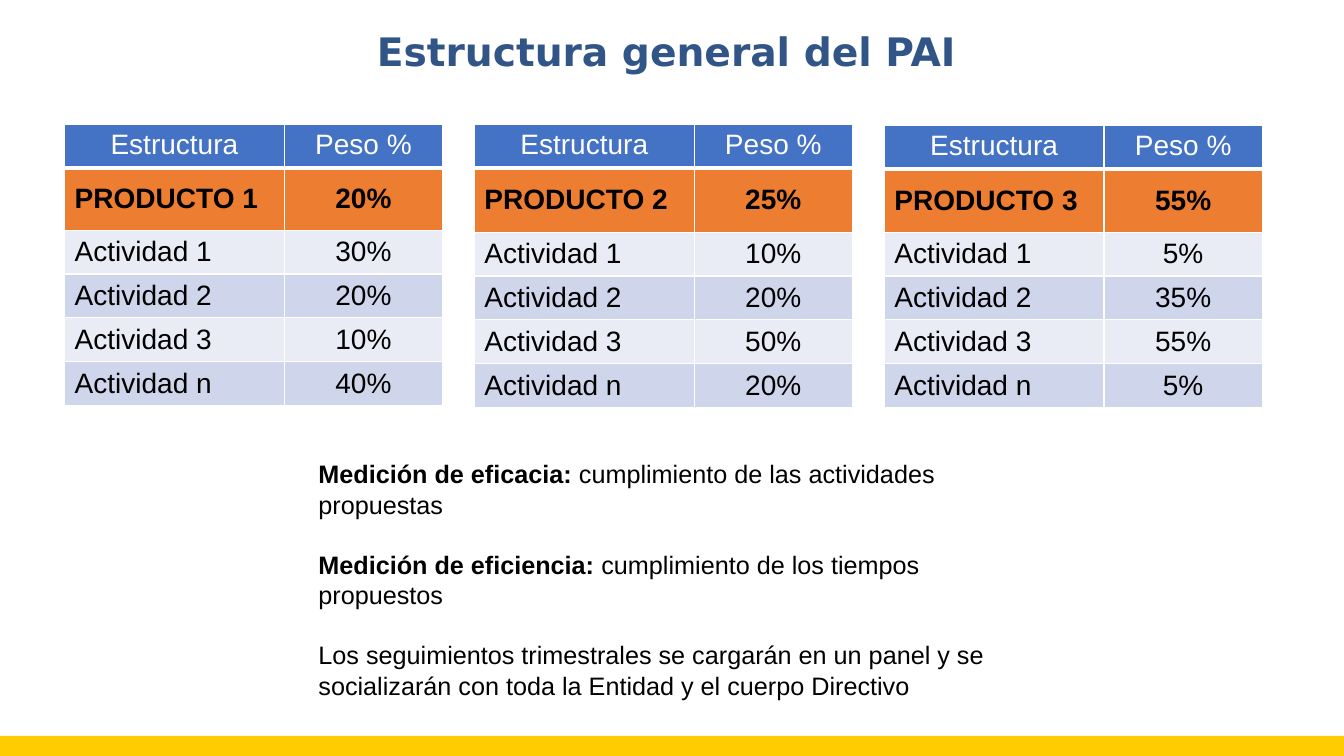
from lxml.etree import SubElement
from pptx import Presentation
from pptx.dml.color import RGBColor as RGB
from pptx.enum.shapes import MSO_SHAPE as SHAPE
from pptx.enum.text import MSO_ANCHOR as ANCHOR, MSO_AUTO_SIZE as AUTO, PP_ALIGN as ALIGN
from pptx.oxml.ns import qn
from pptx.util import Inches, Pt

COLORS = {
    "title": "315587", "bar": "FFCC01", "header": "4472C4", "product": "ED7D31",
    "light": "E9EBF5", "dark": "CFD5EA", "white": "FFFFFF", "text": "000000",
}
ACTIVITIES = ["Actividad 1", "Actividad 2", "Actividad 3", "Actividad n"]
# Per product: weight, activity weights, table top, product row height
PRODUCTS = [
    ("20%", ["30%", "20%", "10%", "40%"], 1.23, 0.62),
    ("25%", ["10%", "20%", "50%", "20%"], 1.23, 0.64),
    ("55%", ["5%", "35%", "55%", "5%"], 1.24, 0.63),
]
NOTES = [
    ("Medición de eficacia:", " cumplimiento de las actividades propuestas"),
    ("Medición de eficiencia:", " cumplimiento de los tiempos propuestos"),
    ("", "Los seguimientos trimestrales se cargarán en un panel y se "
         "socializarán con toda la Entidad y el cuerpo Directivo"),
]


def color(name):
    return RGB.from_string(COLORS[name])


def add_run(p, text, size=18, font="Arial", fill="text", bold=False):
    r = p.add_run()
    r.text = text
    r.font.size, r.font.name, r.font.bold = Pt(size), font, bold
    r.font.color.rgb = color(fill)


def add_text_box(s, x, y, w, h, wrap=True):
    tf = s.shapes.add_textbox(Inches(x), Inches(y), Inches(w), Inches(h)).text_frame
    tf.word_wrap = wrap
    tf.auto_size = AUTO.SHAPE_TO_FIT_TEXT
    return tf


def set_borders(cell, bottom=1):
    tc_pr = cell._tc.get_or_add_tcPr()
    for i, (side, width) in enumerate(
            [("lnL", 1), ("lnR", 1), ("lnT", 1), ("lnB", bottom)]):
        ln = SubElement(tc_pr, qn("a:" + side), w=str(Pt(width)))
        fill = SubElement(ln, qn("a:solidFill"))
        SubElement(fill, qn("a:srgbClr"), val=COLORS["white"])
        tc_pr.insert(i, ln)  # borders come before the cell fill


def add_bar(s, x, y, w, h):
    sp = s.shapes.add_shape(SHAPE.RECTANGLE, Inches(x), Inches(y), Inches(w), Inches(h))
    sp.shadow.inherit = False
    sp.fill.solid()
    sp.fill.fore_color.rgb = color("bar")
    sp.line.fill.background()


def add_title(s, x, y, w, h):
    p = add_text_box(s, x, y, w, h, wrap=False).paragraphs[0]
    add_run(p, "Estructura general del PAI", size=28, font="DejaVu Sans",
            fill="title", bold=True)


def add_product_table(s, x, y, rows, product_height, row_height=0.43):
    heights = [row_height, product_height] + [row_height] * (len(rows) - 2)
    widths = [2.18, 1.57]
    table = s.shapes.add_table(len(rows), len(widths), Inches(x), Inches(y),
                               Inches(sum(widths)), Inches(sum(heights))).table
    table.horz_banding = False
    for col, width in zip(table.columns, widths):
        col.width = Inches(width)
    fills = ["header", "product", "light", "dark", "light", "dark"]
    for i, (values, height, fill) in enumerate(zip(rows, heights, fills)):
        table.rows[i].height = Inches(height)
        for j, value in enumerate(values):
            cell = table.cell(i, j)
            cell.fill.solid()
            cell.fill.fore_color.rgb = color(fill)
            cell.vertical_anchor = ANCHOR.MIDDLE if i else ANCHOR.TOP
            set_borders(cell, bottom=1 if i else 3)
            p = cell.text_frame.paragraphs[0]
            p.alignment = ALIGN.LEFT if i and j == 0 else ALIGN.CENTER
            add_run(p, value, size=20, fill="text" if i else "white", bold=i == 1)


def add_notes_text(s, x, y, w, h):
    tf = add_text_box(s, x, y, w, h)
    for i, (label, text) in enumerate(NOTES):
        p = tf.paragraphs[0] if i == 0 else tf.add_paragraph()
        if i:
            p.space_before = Pt(21.5)
        if label:
            add_run(p, label, bold=True)
        add_run(p, text)


def main():
    prs = Presentation()
    prs.slide_width, prs.slide_height = Inches(13.33), Inches(7.5)
    s = prs.slides.add_slide(prs.slide_layouts[6])

    # Footer bar and title
    add_bar(s, 0, 7.3, 13.33, 0.23)
    add_title(s, 3.64, 0.22, 6.06, 0.57)

    # One table per product, evenly spaced
    for i, (weight, shares, top, product_height) in enumerate(PRODUCTS):
        rows = [("Estructura", "Peso %"), (f"PRODUCTO {i + 1}", weight),
                *zip(ACTIVITIES, shares)]
        add_product_table(s, 0.64 + 4.065 * i, top, rows, product_height)

    # Explanatory text
    add_notes_text(s, 3.06, 4.5, 7.22, 1.92)

    prs.save("out.pptx")


if __name__ == "__main__":
    main()
